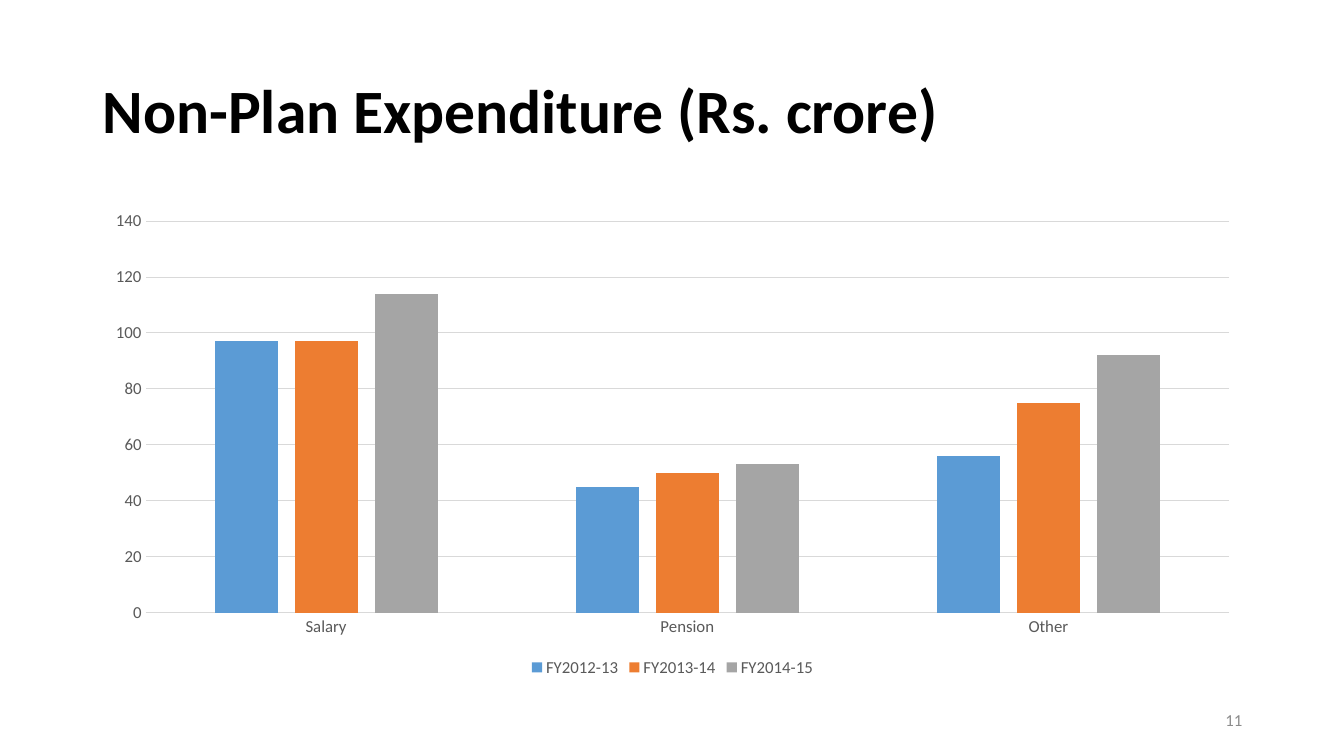
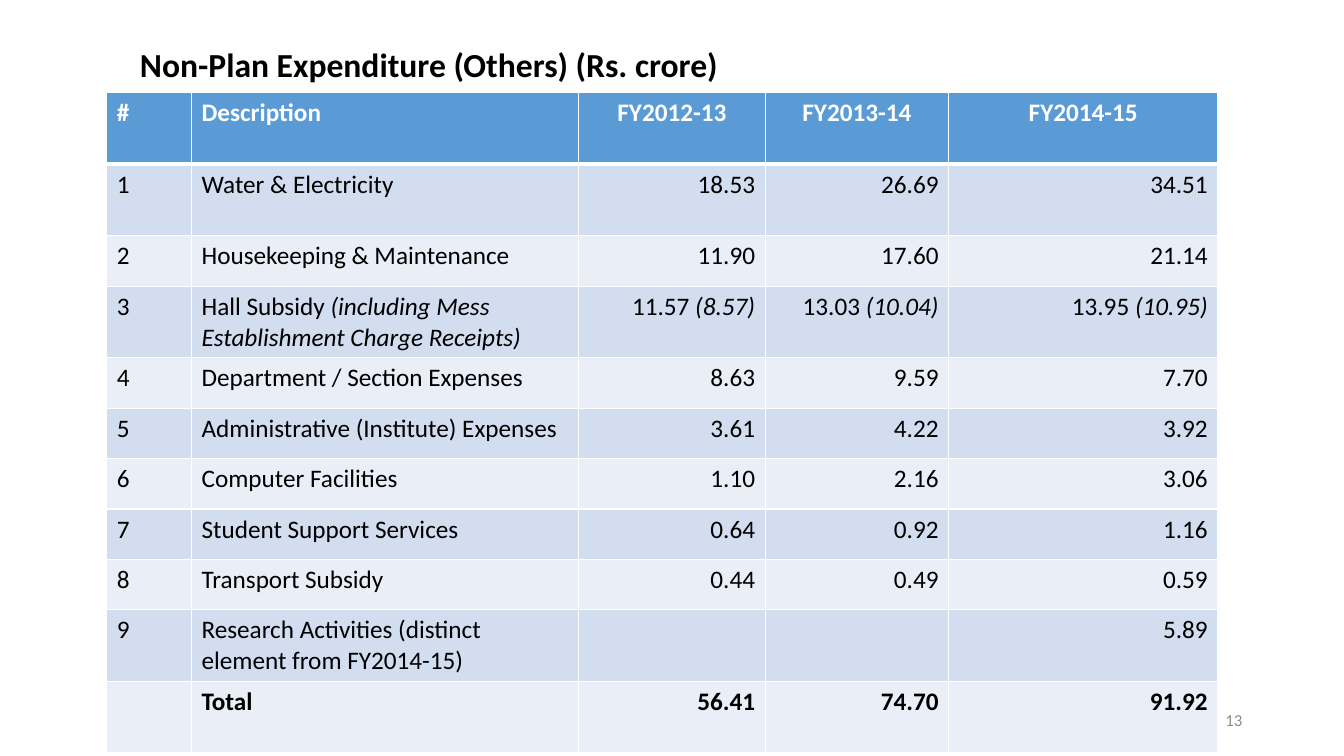
from lxml import etree
from pptx import Presentation
from pptx import util as u
from pptx.chart.data import CategoryChartData
from pptx.dml.color import RGBColor
from pptx.enum import chart as ch
from pptx.enum import text
from pptx.oxml import ns

FONT = "Calibri"
BLACK = RGBColor(0x00, 0x00, 0x00)
WHITE = RGBColor(0xFF, 0xFF, 0xFF)
BLUE = RGBColor(0x5B, 0x9B, 0xD5)
ORANGE = RGBColor(0xED, 0x7D, 0x31)
GREY = RGBColor(0xA5, 0xA5, 0xA5)
BAND_DARK = RGBColor(0xD2, 0xDE, 0xEF)
BAND_LIGHT = RGBColor(0xEA, 0xEF, 0xF7)
GRID = RGBColor(0xD9, 0xD9, 0xD9)
AXIS_TEXT = RGBColor(0x59, 0x59, 0x59)
NUMBER_TEXT = RGBColor(0x8C, 0x8C, 0x8C)

LEFT, CENTER, RIGHT = text.PP_ALIGN.LEFT, text.PP_ALIGN.CENTER, text.PP_ALIGN.RIGHT

YEARS = ["FY2012-13", "FY2013-14", "FY2014-15"]
CATEGORIES = ["Salary", "Pension", "Other"]
SPENDING = [
    (YEARS[0], (97, 45, 56), BLUE),
    (YEARS[1], (97, 50, 75), ORANGE),
    (YEARS[2], (114, 53, 92), GREY),
]

COLUMN_WIDTHS = [0.84, 3.84, 1.85, 1.82, 2.67]
SHORT_ROW, TALL_ROW = 0.5, 0.71
TALL_ROWS = {0, 1, 3, 9, 10}
OTHER_ROWS = [
    ["#", "Description", *YEARS],
    ["1", "Water & Electricity", "18.53", "26.69", "34.51"],
    ["2", "Housekeeping & Maintenance", "11.90", "17.60", "21.14"],
    ["3", ("Hall Subsidy ", "(including Mess Establishment Charge Receipts)"),
     ("11.57 ", "(8.57)"), ("13.03 ", "(10.04)"), ("13.95 ", "(10.95)")],
    ["4", "Department / Section Expenses", "8.63", "9.59", "7.70"],
    ["5", "Administrative (Institute) Expenses", "3.61", "4.22", "3.92"],
    ["6", "Computer Facilities", "1.10", "2.16", "3.06"],
    ["7", "Student Support Services", "0.64", "0.92", "1.16"],
    ["8", "Transport Subsidy", "0.44", "0.49", "0.59"],
    ["9", "Research Activities (distinct element from FY2014-15)", "", "", "5.89"],
    ["", "Total", "56.41", "74.70", "91.92"],
]


def style_font(font, size, color, bold=False):
    font.name = FONT
    font.size = u.Pt(size)
    font.bold = bold
    font.color.rgb = color


def add_text(page, words, area, size, color, bold=False, align=LEFT):
    box = page.shapes.add_textbox(*map(u.Inches, area))
    frame = box.text_frame
    frame.word_wrap = True
    frame.vertical_anchor = text.MSO_ANCHOR.MIDDLE
    frame.text = words
    para = frame.paragraphs[0]
    para.alignment = align
    para.line_spacing = 0.9
    style_font(para.runs[0].font, size, color, bold)


def add_page(deck, title, area, title_size):
    page = deck.slides.add_slide(deck.slide_layouts[6])
    add_text(page, title, area, title_size, BLACK, bold=True)
    return page


def add_page_number(page, number):
    add_text(page, str(number), (9.42, 6.95, 3, 0.4), 12, NUMBER_TEXT, align=RIGHT)


def style_axis(axis):
    axis.major_tick_mark = ch.XL_TICK_MARK.NONE
    axis.minor_tick_mark = ch.XL_TICK_MARK.NONE
    style_font(axis.tick_labels.font, 12, AXIS_TEXT)


def style_line(line):
    line.color.rgb = GRID
    line.width = u.Pt(0.75)


def add_column_chart(page, area):
    data = CategoryChartData()
    data.categories = CATEGORIES
    for name, values, _ in SPENDING:
        data.add_series(name, values)
    chart = page.shapes.add_chart(
        ch.XL_CHART_TYPE.COLUMN_CLUSTERED, *map(u.Inches, area), data).chart
    style_font(chart.font, 10, BLACK)
    chart.has_title = False
    chart.has_legend = True
    chart.legend.position = ch.XL_LEGEND_POSITION.BOTTOM
    chart.legend.include_in_layout = False
    style_font(chart.legend.font, 12, AXIS_TEXT)

    plot = chart.plots[0]
    plot.gap_width = 219
    plot.overlap = -27
    plot.vary_by_categories = False
    for series, (_, _, color) in zip(plot.series, SPENDING):
        series.format.fill.solid()
        series.format.fill.fore_color.rgb = color

    style_axis(chart.category_axis)
    style_line(chart.category_axis.format.line)
    value_axis = chart.value_axis
    style_axis(value_axis)
    value_axis.minimum_scale, value_axis.maximum_scale = 0, 140
    value_axis.major_unit = 20
    value_axis.format.line.fill.background()
    style_line(value_axis.major_gridlines.format.line)


def set_borders(cell, top, bottom):
    properties = cell._tc.get_or_add_tcPr()
    sides = [("L", 1), ("R", 1), ("T", top), ("B", bottom)]
    for position, (side, width) in enumerate(sides):
        line = etree.Element(ns.qn(f"a:ln{side}"), w=str(u.Pt(width)))
        fill = etree.SubElement(line, ns.qn("a:solidFill"))
        etree.SubElement(fill, ns.qn("a:srgbClr"), val=str(WHITE))
        properties.insert(position, line)


def fill_cell(cell, content, fill, color, bold, align):
    cell.fill.solid()
    cell.fill.fore_color.rgb = fill
    para = cell.text_frame.paragraphs[0]
    para.alignment = align
    style_font(para.font, 18, color, bold)
    parts = content if isinstance(content, tuple) else (content,)
    for index, words in enumerate(parts):
        if words:
            span = para.add_run()
            span.text = words
            style_font(span.font, 18, color, bold)
            span.font.italic = index > 0


def add_expense_table(page, left, top):
    heights = [TALL_ROW if row in TALL_ROWS else SHORT_ROW
               for row in range(len(OTHER_ROWS))]
    area = (left, top, sum(COLUMN_WIDTHS), sum(heights))
    table = page.shapes.add_table(
        len(OTHER_ROWS), len(COLUMN_WIDTHS), *map(u.Inches, area)).table
    table.horz_banding = False
    for column, width in zip(table.columns, COLUMN_WIDTHS):
        column.width = u.Inches(width)
    for row, (contents, height) in enumerate(zip(OTHER_ROWS, heights)):
        table.rows[row].height = u.Inches(height)
        header = row == 0
        bold = header or row == len(OTHER_ROWS) - 1
        fill = BLUE if header else BAND_DARK if row % 2 else BAND_LIGHT
        for column, content in enumerate(contents):
            align = LEFT if column < 2 else CENTER if header else RIGHT
            cell = table.cell(row, column)
            fill_cell(cell, content, fill, WHITE if header else BLACK, bold, align)
            set_borders(cell, 3 if row == 1 else 1, 3 if header else 1)


def main():
    deck = Presentation()
    deck.slide_width, deck.slide_height = u.Inches(13.33), u.Inches(7.5)

    page = add_page(deck, "Non-Plan Expenditure (Rs. crore)", (0.92, 0.4, 11.5, 1.45), 44)
    add_column_chart(page, (0.92, 2, 11.5, 4.76))
    add_page_number(page, 11)

    page = add_page(deck, "Non-Plan Expenditure (Others) (Rs. crore)",
                    (1.29, 0.4, 11.13, 0.52), 24)
    add_expense_table(page, 1.06, 0.92)
    add_page_number(page, 13)

    deck.save("out.pptx")


if __name__ == "__main__":
    main()
